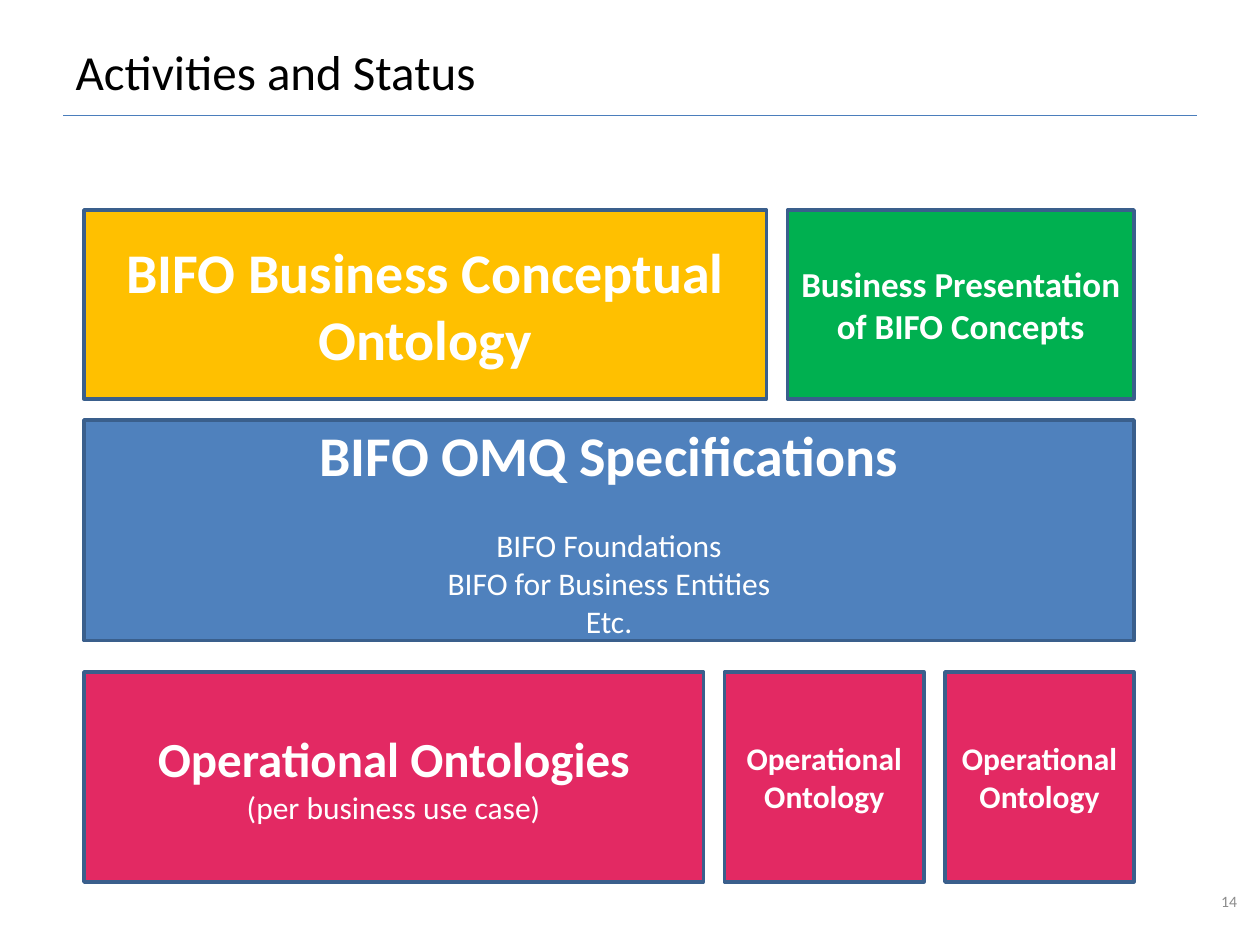
"""Build the Activities and Status slide: rows of stacked ontology blocks."""
from dataclasses import dataclass

from lxml import etree
from pptx import Presentation
from pptx import util as u
from pptx.dml.color import RGBColor
from pptx.enum import shapes, text
from pptx.oxml import ns

FONT = "Calibri"
WHITE, BLACK, GREY = "FFFFFF", "000000", "8C8C8C"
AMBER, GREEN, BLUE, PINK = "FFC000", "00B050", "4F81BD", "E32963"
BORDER, RULE = "3A5F8C", "4B7EBC"
LEFT, GAP = 48, 12


@dataclass
class Line:
    text: str
    size: float
    bold: bool = False
    color: str = WHITE
    after: float = 0


@dataclass
class Block:
    width: float
    fill: str
    lines: list[Line]


@dataclass
class Row:
    top: float
    height: float
    blocks: list[Block]


def rgb(value: str) -> RGBColor:
    return RGBColor.from_string(value)


def write(tf, lines: list[Line], align) -> None:
    tf.word_wrap = True
    tf.vertical_anchor = text.MSO_ANCHOR.MIDDLE
    tf.text = "\n".join(line.text for line in lines)
    for p, line in zip(tf.paragraphs, lines):
        p.alignment = align
        p.space_after = u.Pt(line.after)
        for r in p.runs:
            r.font.name = FONT
            r.font.size = u.Pt(line.size)
            r.font.bold = line.bold
            r.font.color.rgb = rgb(line.color)


def draw_row(s, row: Row) -> None:
    x = LEFT
    for block in row.blocks:
        sp = s.shapes.add_shape(shapes.MSO_SHAPE.RECTANGLE, u.Pt(x), u.Pt(row.top),
                                u.Pt(block.width), u.Pt(row.height))
        sp.shadow.inherit = False
        sp.fill.solid()
        sp.fill.fore_color.rgb = rgb(block.fill)
        sp.line.color.rgb = rgb(BORDER)
        sp.line.width = u.Pt(2)
        write(sp.text_frame, block.lines, text.PP_ALIGN.CENTER)
        x += block.width + GAP


def draw_rule(s, x1: float, x2: float, y: float) -> None:
    rule = s.shapes.add_connector(shapes.MSO_CONNECTOR.STRAIGHT,
                                  u.Pt(x1), u.Pt(y), u.Pt(x2), u.Pt(y))
    rule.line.color.rgb = rgb(RULE)
    rule.line.width = u.Pt(0.75)
    etree.SubElement(rule._element.spPr, ns.qn("a:effectLst"))


def draw_title(s, line: Line) -> None:
    sp = s.shapes.title
    sp.left, sp.top, sp.width, sp.height = u.Pt(36), u.Pt(18), u.Pt(648), u.Pt(44.64)
    write(sp.text_frame, [line], text.PP_ALIGN.LEFT)


def draw_number(s, line: Line) -> None:
    sp = s.shapes.add_textbox(u.Pt(684), u.Pt(500.4), u.Pt(30), u.Pt(28.8))
    write(sp.text_frame, [line], text.PP_ALIGN.RIGHT)


OPERATIONAL = [Line("Operational Ontology", 18, True)]
ROWS = [
    Row(120, 108, [
        Block(390, AMBER, [Line("BIFO Business Conceptual Ontology", 32, True)]),
        Block(198, GREEN, [Line("Business Presentation of BIFO Concepts", 20, True)]),
    ]),
    Row(240, 126, [
        Block(600, BLUE, [
            Line("BIFO OMQ Specifications", 32, True, after=22),
            Line("BIFO Foundations", 18),
            Line("BIFO for Business Entities", 18),
            Line("Etc.", 18),
        ]),
    ]),
    Row(384, 120, [
        Block(354, PINK, [
            Line("Operational Ontologies", 28, True),
            Line("(per business use case)", 18),
        ]),
        Block(114, PINK, OPERATIONAL),
        Block(108, PINK, OPERATIONAL),
    ]),
]


def main() -> None:
    prs = Presentation()
    prs.slide_width, prs.slide_height = u.Pt(720), u.Pt(540)
    s = prs.slides.add_slide(prs.slide_layouts.get_by_name("Title Only"))
    draw_rule(s, 36, 684, 66)
    draw_title(s, Line("Activities and Status", 28, color=BLACK))
    draw_number(s, Line("14", 9, color=GREY))
    for row in ROWS:
        draw_row(s, row)
    prs.save("out.pptx")


if __name__ == "__main__":
    main()
